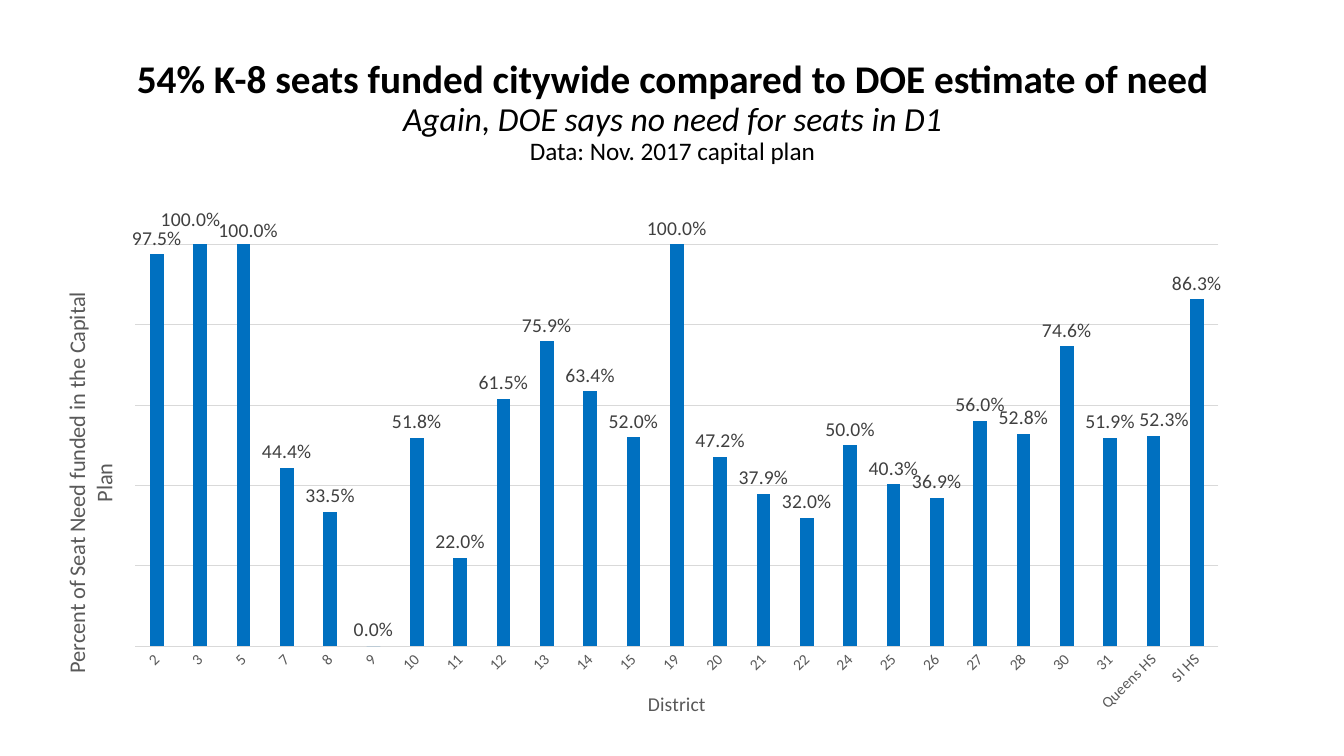
import pptx
import pptx.chart.data
import pptx.dml.color
import pptx.enum.chart
import pptx.enum.text
import pptx.oxml
import pptx.oxml.ns
import pptx.util

WIDE, HIGH = 13.33, 7.5
FONT = "Calibri"
HUES = {"bar": "0070C0", "grid": "D9D9D9", "axis": "595959",
        "label": "404040", "text": "000000", "back": "FFFFFF"}

# text, size, bold, italic
HEAD = [
    ("54% K-8 seats funded citywide compared to DOE estimate of need", 28, True, False),
    ("Again, DOE says no need for seats in D1", 24, False, True),
    ("Data: Nov. 2017 capital plan", 18, False, False),
]
NEED = {
    "2": 97.5, "3": 100, "5": 100, "7": 44.4, "8": 33.5, "9": 0,
    "10": 51.8, "11": 22, "12": 61.5, "13": 75.9, "14": 63.4, "15": 52,
    "19": 100, "20": 47.2, "21": 37.9, "22": 32, "24": 50, "25": 40.3,
    "26": 36.9, "27": 56, "28": 52.8, "30": 74.6, "31": 51.9,
    "Queens HS": 52.3, "SI HS": 86.3,
}
# district: label shift as shares of the chart's width and height
SHIFTS = {"3": (-0.008, -0.016), "5": (0.004, 0.005), "Queens HS": (0.009, 0)}
PLOT = {"x": 0.081, "y": 0.098, "w": 0.906, "h": 0.758}
SIDE = {"x": 0.016, "y": 0.18}
RATE = "0.0%"


def hue(name):
    return pptx.dml.color.RGBColor.from_string(HUES[name])


def style(font, size, name):
    font.name, font.size = FONT, pptx.util.Pt(size)
    font.bold = False
    font.color.rgb = hue(name)


def rule(line):
    line.color.rgb = hue("grid")
    line.width = pptx.util.Pt(0.75)


def layout(spots, edge=True, inner=False):
    """Build a manual chart layout from shares of the chart's size."""
    body = '<c:layoutTarget val="inner"/>' if inner else ""
    if edge:
        body += '<c:xMode val="edge"/><c:yMode val="edge"/>'
    body += "".join(f'<c:{key} val="{val}"/>' for key, val in spots.items())
    space = pptx.oxml.ns.nsdecls("c")
    return pptx.oxml.parse_xml(
        f"<c:layout {space}><c:manualLayout>{body}</c:manualLayout></c:layout>")


def place(node, new):
    """Put a layout into a node in place of any it has."""
    for old in node.findall(pptx.oxml.ns.qn("c:layout")):
        node.remove(old)
    node.insert(1 if node.tag.endswith("}title") else 0, new)


def caption(axis, text, size, turn=0):
    frame = axis.axis_title.text_frame
    frame.text = text
    style(frame.paragraphs[0].runs[0].font, size, "axis")
    body = frame._txBody.find(pptx.oxml.ns.qn("a:bodyPr"))
    body.set("rot", str(turn * 60000))
    body.set("vert", "horz")


def add_head(slide):
    title = slide.shapes.title
    title.left, title.top, title.width, title.height = (
        pptx.util.Inches(val) for val in (0.92, 0.54, 11.5, 1.16))
    title.fill.solid()
    title.fill.fore_color.rgb = hue("back")
    frame = title.text_frame
    frame.word_wrap = True
    frame.vertical_anchor = pptx.enum.text.MSO_ANCHOR.MIDDLE
    para = frame.paragraphs[0]
    para.text = "\v".join(row[0] for row in HEAD)
    para.alignment = pptx.enum.text.PP_ALIGN.CENTER
    para.line_spacing = 0.9
    for run, (_, size, bold, slant) in zip(para.runs, HEAD):
        style(run.font, size, "text")
        run.font.bold, run.font.italic = bold, slant


def add_bars(slide):
    data = pptx.chart.data.CategoryChartData(number_format=RATE)
    data.categories = list(NEED)
    data.add_series("Series 1", [round(val / 100, 3) for val in NEED.values()])
    box = [pptx.util.Inches(val) for val in (0.38, 1.91, 11.86, 5.26)]
    chart = slide.shapes.add_chart(
        pptx.enum.chart.XL_CHART_TYPE.COLUMN_CLUSTERED, *box, data).chart
    chart.has_legend = chart.has_title = False
    style(chart.font, 10, "text")
    plot = chart.plots[0]
    plot.gap_width, plot.overlap = 219, -27
    plot.vary_by_categories = False
    place(chart._chartSpace.chart.plotArea, layout(PLOT, inner=True))
    add_axes(chart)
    add_labels(plot.series[0])


def add_axes(chart):
    none = pptx.enum.chart.XL_TICK_MARK.NONE
    base, side = chart.category_axis, chart.value_axis
    base.major_tick_mark = none
    rule(base.format.line)
    style(base.tick_labels.font, 11, "axis")
    turn = base._element.find(
        f"{pptx.oxml.ns.qn('c:txPr')}/{pptx.oxml.ns.qn('a:bodyPr')}")
    turn.set("rot", str(-45 * 60000))
    caption(base, "District", 14)

    side.minimum_scale, side.maximum_scale, side.major_unit = 0, 1, 0.2
    side.has_major_gridlines = True
    rule(side.major_gridlines.format.line)
    side.tick_labels.number_format = RATE
    side.tick_labels.number_format_is_linked = False
    caption(side, "Percent of Seat Need funded in the Capital Plan", 16, -90)
    place(side.axis_title._element, layout(SIDE))
    side.visible = False


def add_labels(bars):
    above = pptx.enum.chart.XL_LABEL_POSITION.OUTSIDE_END
    bars.format.fill.solid()
    bars.format.fill.fore_color.rgb = hue("bar")
    labels = bars.data_labels
    labels.show_value = True
    labels.position = above
    labels.number_format, labels.number_format_is_linked = RATE, False
    style(labels.font, 14, "label")
    names = list(NEED)
    for name, (across, down) in SHIFTS.items():
        spot = names.index(name)
        label = bars.points[spot].data_label
        style(label.font, 14, "label")
        label.position = above
        node = labels._element.xpath(f'c:dLbl[c:idx/@val="{spot}"]')[0]
        form = pptx.oxml.parse_xml(
            f'<c:numFmt {pptx.oxml.ns.nsdecls("c")} formatCode="{RATE}" sourceLinked="0"/>')
        node.insert(1, form)
        node.insert(1, layout({"x": across, "y": down}, edge=False))


def main():
    deck = pptx.Presentation()
    deck.slide_width = pptx.util.Inches(WIDE)
    deck.slide_height = pptx.util.Inches(HIGH)
    slide = deck.slides.add_slide(deck.slide_layouts.get_by_name("Title Only"))
    add_bars(slide)
    add_head(slide)
    deck.save("out.pptx")


if __name__ == "__main__":
    main()
